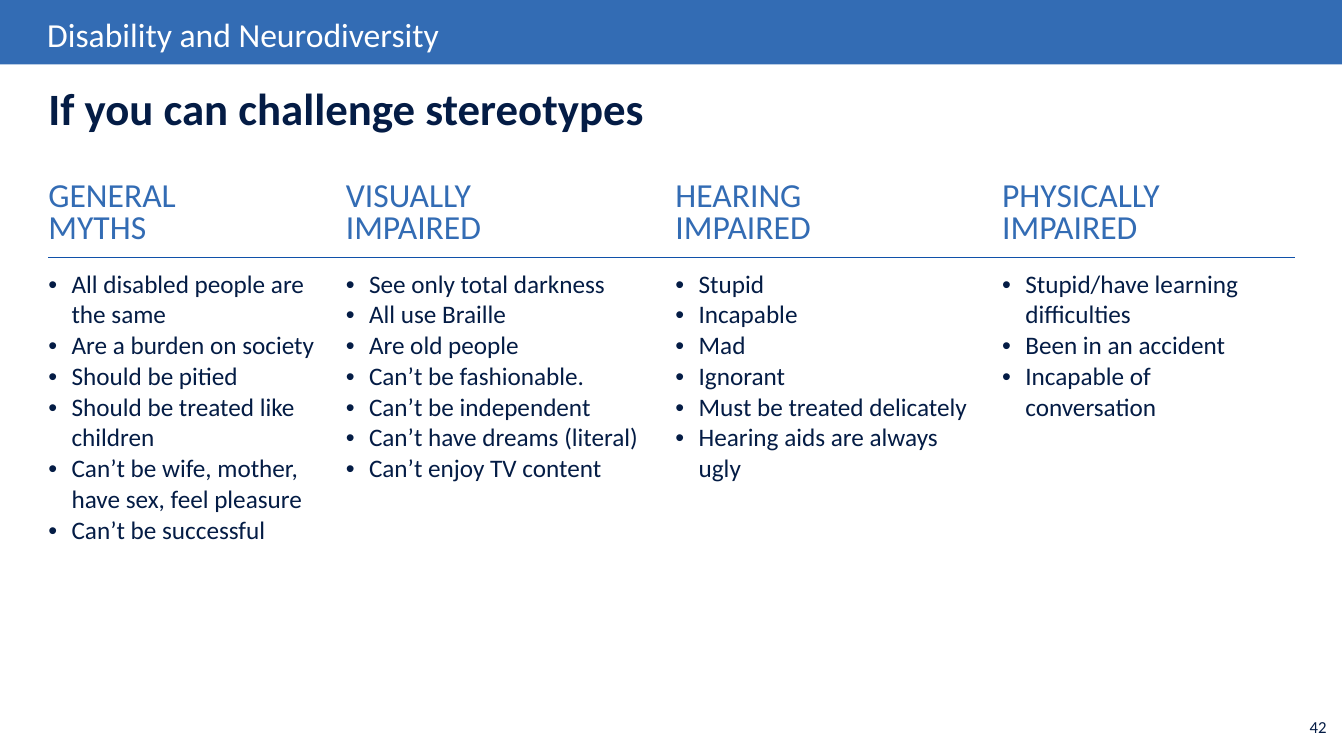
from lxml import etree
from pptx import Presentation, util as u
from pptx.dml.color import RGBColor
from pptx.enum import shapes, text
from pptx.oxml.ns import qn

COLORS = {"banner": "336CB4", "rule": "1051A9", "ink": "041C45", "white": "FFFFFF"}
FONT = "Calibri"
COLUMN_WIDTHS = [2.95, 3.27, 3.24, 2.9]
ROW_HEIGHTS = [0.92, 3.48]
BULLET_INDENT = u.Inches(0.23)
STEREOTYPES = [
    ("GENERAL\nMYTHS", [
        "All disabled people are the same",
        "Are a burden on society",
        "Should be pitied",
        "Should be treated like children",
        "Can’t be wife, mother, have sex, feel pleasure",
        "Can’t be successful",
    ]),
    ("VISUALLY \vIMPAIRED", [
        "See only total darkness",
        "All use Braille",
        "Are old people",
        "Can’t be fashionable.",
        "Can’t be independent",
        "Can’t have dreams (literal)",
        "Can’t enjoy TV content",
    ]),
    ("HEARING \vIMPAIRED", [
        "Stupid",
        "Incapable",
        "Mad",
        "Ignorant",
        "Must be treated delicately",
        "Hearing aids are always ugly",
    ]),
    ("PHYSICALLY\nIMPAIRED", [
        "Stupid/have learning difficulties",
        "Been in an accident",
        "Incapable of conversation",
    ]),
]


def color(name):
    return RGBColor.from_string(COLORS[name])


def format_runs(paragraph, size, color_name, bold=False):
    for run in paragraph.runs:
        run.font.name = FONT
        run.font.size = u.Pt(size)
        run.font.bold = bold
        run.font.color.rgb = color(color_name)


def set_margins(target, left, top, right, bottom):
    target.margin_left, target.margin_top = u.Inches(left), u.Inches(top)
    target.margin_right, target.margin_bottom = u.Inches(right), u.Inches(bottom)


def add_label(slide, box, words, size, color_name, bold=False):
    shape = slide.shapes.add_textbox(*map(u.Inches, box))
    frame = shape.text_frame
    frame.word_wrap = True
    frame.text = words
    format_runs(frame.paragraphs[0], size, color_name, bold)
    return frame


def add_banner(slide, box, words):
    left, top, width, height = box
    shape = slide.shapes.add_shape(shapes.MSO_SHAPE.RECTANGLE, *map(u.Inches, box))
    shape.shadow.inherit = False
    shape.fill.solid()
    shape.fill.fore_color.rgb = color("banner")
    shape.line.fill.background()
    add_label(slide, (left + 0.37, top + 0.09, width * 0.4, 0.5), words, 24, "white")


def add_title(slide, box, words):
    frame = add_label(slide, box, words, 32, "ink", bold=True)
    set_margins(frame, 0, 0, 0, 0)
    frame.vertical_anchor = text.MSO_ANCHOR.MIDDLE


def add_bullet(paragraph):
    properties = paragraph._p.get_or_add_pPr()
    properties.set("marL", str(BULLET_INDENT))
    properties.set("indent", str(-BULLET_INDENT))
    etree.SubElement(properties, qn("a:buFont"), typeface="Arial")
    etree.SubElement(properties, qn("a:buChar"), char="•")


def set_borders(cell, ruled_side):
    cell.fill.background()
    properties = cell._tc.get_or_add_tcPr()
    for position, side in enumerate(("lnL", "lnR", "lnT", "lnB")):
        line = etree.Element(qn(f"a:{side}"), w=str(u.Pt(0.5)))
        if side == ruled_side:
            fill = etree.SubElement(line, qn("a:solidFill"))
            etree.SubElement(fill, qn("a:srgbClr"), val=COLORS["rule"])
        else:
            etree.SubElement(line, qn("a:noFill"))
        properties.insert(position, line)


def fill_heading(cell, heading):
    cell.text_frame.text = heading
    cell.vertical_anchor = text.MSO_ANCHOR.BOTTOM
    set_margins(cell, 0, 0, 0, 0.08)
    for paragraph in cell.text_frame.paragraphs:
        paragraph.line_spacing = u.Pt(22.8)
        format_runs(paragraph, 24, "banner")
    set_borders(cell, "lnB")


def fill_list(cell, items):
    cell.text_frame.text = "\n".join(items)
    set_margins(cell, 0, 0.12, 0.24, 0.12)
    for paragraph in cell.text_frame.paragraphs:
        add_bullet(paragraph)
        format_runs(paragraph, 18, "ink")
    set_borders(cell, "lnT")


def add_stereotype_table(slide, left, top):
    box = (left, top, sum(COLUMN_WIDTHS), sum(ROW_HEIGHTS))
    table = slide.shapes.add_table(
        len(ROW_HEIGHTS), len(COLUMN_WIDTHS), *map(u.Inches, box)).table
    table.first_row = False
    table.horz_banding = False
    for row, height in zip(table.rows, ROW_HEIGHTS):
        row.height = u.Inches(height)
    for index, (heading, items) in enumerate(STEREOTYPES):
        table.columns[index].width = u.Inches(COLUMN_WIDTHS[index])
        fill_heading(table.cell(0, index), heading)
        fill_list(table.cell(1, index), items)


def main():
    presentation = Presentation()
    presentation.slide_width = u.Inches(13.33)
    presentation.slide_height = u.Inches(7.5)
    slide = presentation.slides.add_slide(presentation.slide_layouts[6])
    add_banner(slide, (0, 0, 13.31, 0.64), "Disability and Neurodiversity")
    add_stereotype_table(slide, 0.48, 1.63)
    add_title(slide, (0.48, 0.8, 11.02, 0.54), "If you can challenge stereotypes")
    add_label(slide, (12.89, 7.06, 0.44, 0.4), "42", 12, "ink")
    presentation.save("out.pptx")


if __name__ == "__main__":
    main()
